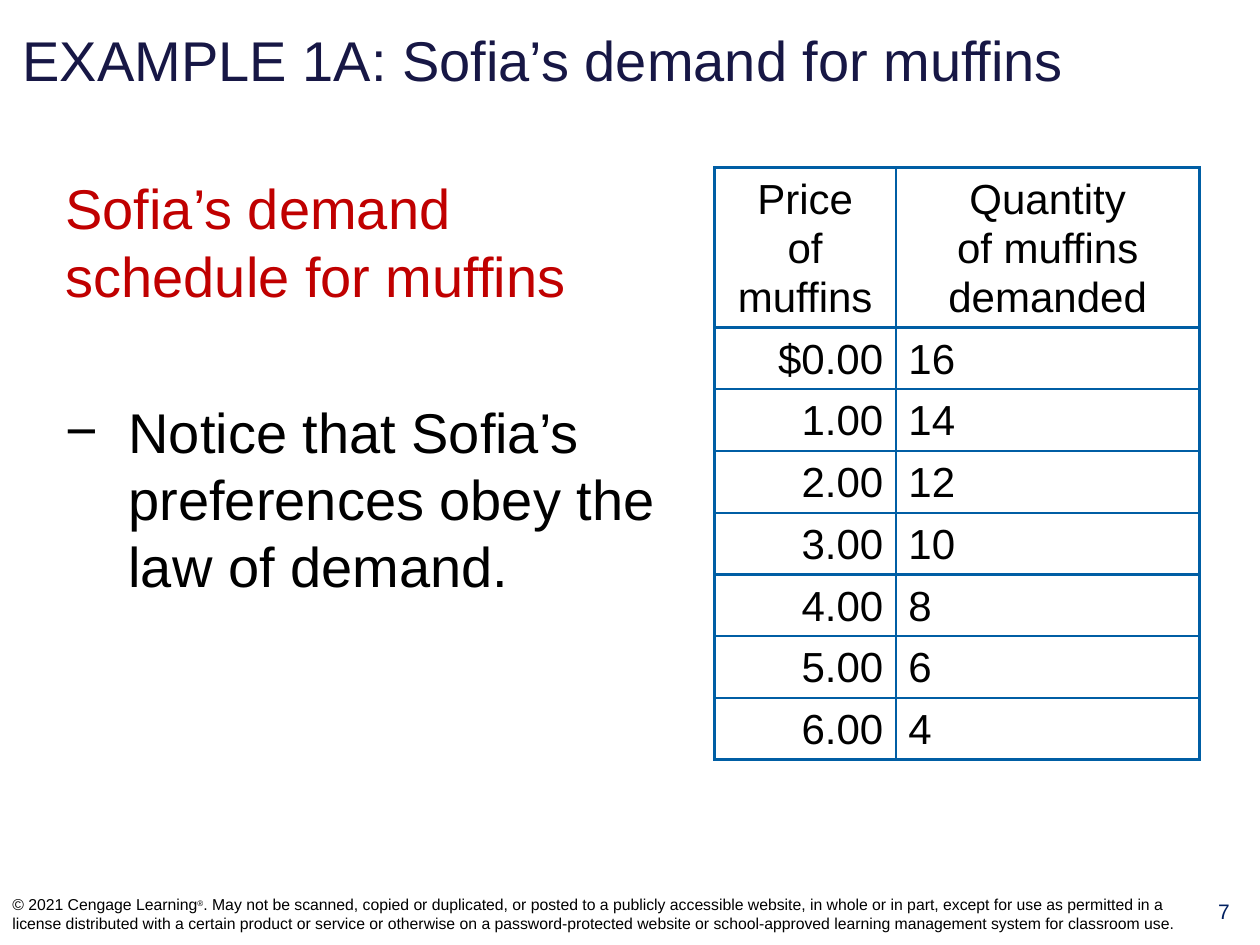
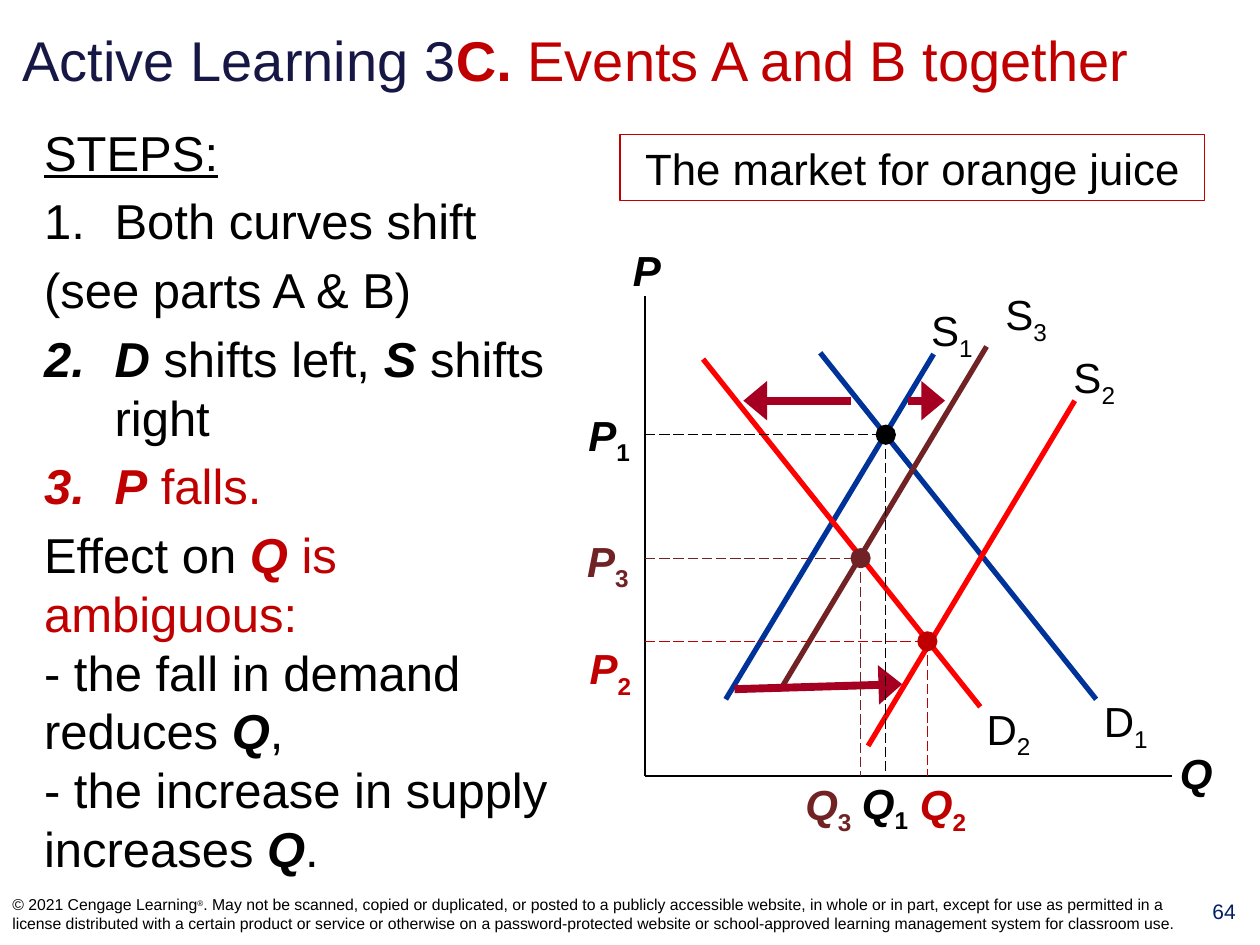
import collections

import lxml.etree
import pptx
import pptx.dml.color
import pptx.enum.dml
import pptx.enum.shapes
import pptx.enum.text
import pptx.oxml.ns
import pptx.util

Inches = pptx.util.Inches
Pt = pptx.util.Pt
ALIGN = pptx.enum.text.PP_ALIGN
ANCHOR = pptx.enum.text.MSO_ANCHOR

FONT = "Arial"
COLORS = {
    "title": "171745", "number": "002060", "text": "000000", "accent": "C00000",
    "grid": "005EA4", "paper": "FFFFFF", "before": "003399", "after": "FF0000",
    "middle": "702224", "arrow": "A50021",
}

Box = collections.namedtuple("Box", "left top width height")
Span = collections.namedtuple("Span", "text style color", defaults=("", None))

TITLE_BOX = Box(0.08, 0.11, 9.75, 0.72)
NUMBER_BOX = Box(9.43, 7.08, 0.57, 0.41)
FOOTER_BOX = Box(0, 7, 9.5, 0.5)
COPYRIGHT = [
    Span("© 2021 Cengage Learning"),
    Span("®", "^"),
    Span(". May not be scanned, copied or duplicated, or posted to a publicly accessible "
         "website, in whole or in part, except for use as permitted in a license distributed "
         "with a certain product or service or otherwise on a password-protected website or "
         "school-approved learning management system for classroom use."),
]


def rgb(name):
    return pptx.dml.color.RGBColor.from_string(COLORS[name])


def add_xml(parent, tag, **attributes):
    return lxml.etree.SubElement(parent, pptx.oxml.ns.qn(tag), attributes)


def write(para, spans, size, color="text", align=ALIGN.LEFT):
    """Fill a paragraph; span styles are b, i, u, ^ (superscript) and _ (subscript)."""
    para.alignment = align
    para.font.name = FONT
    para.font.size = Pt(size)
    para.font.color.rgb = rgb(color)
    for span in spans:
        for index, line in enumerate(span.text.split("\n")):
            if index:
                para.add_line_break()
            if not line:
                continue
            run = para.add_run()
            run.text = line
            for mark, attribute in (("b", "bold"), ("i", "italic"), ("u", "underline")):
                if mark in span.style:
                    setattr(run.font, attribute, True)
            if span.color:
                run.font.color.rgb = rgb(span.color)
            if "^" in span.style:
                run.font.size = Pt(size - 1)
                run.font._element.set("baseline", "30000")
            if "_" in span.style:
                run.font._element.set("baseline", "-25000")


def place(shape, box):
    shape.left, shape.top, shape.width, shape.height = map(Inches, box)


def add_text(page, box, spans, size, color="text", align=ALIGN.LEFT, anchor=ANCHOR.TOP,
             inset=True):
    frame = page.shapes.add_textbox(*map(Inches, box)).text_frame
    frame.word_wrap = True
    frame.vertical_anchor = anchor
    if not inset:
        frame.margin_left = frame.margin_right = 0
        frame.margin_top = frame.margin_bottom = 0
    write(frame.paragraphs[0], spans, size, color, align)


def add_page(deck, title_spans, number):
    """Add a slide with the shared title, page number and copyright line."""
    page = deck.slides.add_slide(deck.slide_layouts[1])
    title = page.shapes.title
    place(title, TITLE_BOX)
    title.text_frame.auto_size = pptx.enum.text.MSO_AUTO_SIZE.NONE
    title.text_frame.vertical_anchor = ANCHOR.MIDDLE
    write(title.text_frame.paragraphs[0], title_spans, 32, "title")
    add_text(page, NUMBER_BOX, [Span(number)], 12, "number", ALIGN.CENTER)
    add_text(page, FOOTER_BOX, COPYRIGHT, 9, anchor=ANCHOR.MIDDLE)
    return page


def set_bullet(para, bullet, indent):
    """A text bullet is used as it is, a number starts automatic numbering there."""
    properties = para._p.get_or_add_pPr()
    hanging = Inches(indent) if bullet else 0
    properties.set("marL", str(hanging))
    properties.set("indent", str(-hanging))
    if bullet is None:
        add_xml(properties, "a:buNone")
    elif isinstance(bullet, int):
        add_xml(properties, "a:buAutoNum", type="arabicPeriod", startAt=str(bullet))
    else:
        add_xml(properties, "a:buChar", char=bullet)


def fill_body(page, box, items, size, indent, gap):
    """Fill the body placeholder from (bullet, spans) items."""
    body = page.placeholders[1]
    place(body, box)
    frame = body.text_frame
    frame.auto_size = pptx.enum.text.MSO_AUTO_SIZE.NONE
    for index, (bullet, spans) in enumerate(items):
        para = frame.add_paragraph() if index else frame.paragraphs[0]
        set_bullet(para, bullet, indent)
        para.space_before = Pt(gap if index else 0)
        write(para, spans, size)


def format_cell(cell, text, align):
    properties = cell._tc.get_or_add_tcPr()
    for side in ("a:lnL", "a:lnR", "a:lnT", "a:lnB"):
        border = add_xml(properties, side, w=str(Pt(1.5)))
        add_xml(add_xml(border, "a:solidFill"), "a:srgbClr", val=COLORS["grid"])
    cell.fill.background()
    cell.vertical_anchor = ANCHOR.MIDDLE
    cell.margin_top = cell.margin_bottom = 0
    para = cell.text_frame.paragraphs[0]
    para.line_spacing = 1.05
    write(para, [Span(text)], 24, align=align)


def add_schedule(page, box, header, rows, column_widths, row_height):
    table = page.shapes.add_table(len(rows) + 1, len(header), *map(Inches, box)).table
    table.first_row = table.horz_banding = False
    for column, width in zip(table.columns, column_widths):
        column.width = Inches(width)
    for row in table.rows:
        row.height = Inches(row_height)
    table.rows[0].height = Inches(box.height - row_height * len(rows))
    for row_index, values in enumerate([header, *rows]):
        aligns = (ALIGN.RIGHT, ALIGN.LEFT) if row_index else (ALIGN.CENTER, ALIGN.CENTER)
        for column_index, (text, align) in enumerate(zip(values, aligns)):
            format_cell(table.cell(row_index, column_index), text, align)


def add_caption(page, box, text):
    caption = page.shapes.add_shape(pptx.enum.shapes.MSO_SHAPE.RECTANGLE, *map(Inches, box))
    caption.shadow.inherit = False
    caption.fill.solid()
    caption.fill.fore_color.rgb = rgb("paper")
    caption.line.color.rgb = rgb("accent")
    caption.line.width = Pt(0.75)
    write(caption.text_frame.paragraphs[0], [Span(text)], 25, align=ALIGN.CENTER)


def add_line(page, box, start, end, color, width, dashed=False, arrow=False):
    """Draw a line between two points measured from the corner of the box."""
    points = [Inches(value) for x, y in (start, end) for value in (box.left + x, box.top + y)]
    line = page.shapes.add_connector(pptx.enum.shapes.MSO_CONNECTOR.STRAIGHT, *points)
    line.line.color.rgb = rgb(color)
    line.line.width = Pt(width)
    if dashed:
        line.line.dash_style = pptx.enum.dml.MSO_LINE.LONG_DASH
    if arrow:
        add_xml(line.line._get_or_add_ln(), "a:tailEnd", type="triangle", w="lg", len="med")
    add_xml(line._element.spPr, "a:effectLst")


def add_label(page, box, position, letter, index="", style="", color="text"):
    x, y = position
    spans = [Span(letter, style)]
    if index:
        spans.append(Span(index, style.replace("i", "") + "_"))
    add_text(page, Box(box.left + x, box.top + y, 0.53, 0.4), spans, 24, color,
             ALIGN.CENTER, inset=False)


def add_equilibrium(page, box, index, point, price_label, quantity_label, color):
    x, y = point
    add_line(page, box, (0, y), point, color, 0.75, dashed=True)
    add_line(page, box, point, (x, box.height), color, 0.75, dashed=True)
    size = 0.15
    dot = page.shapes.add_shape(
        pptx.enum.shapes.MSO_SHAPE.OVAL, Inches(box.left + x - size / 2),
        Inches(box.top + y - size / 2), Inches(size), Inches(size))
    dot.shadow.inherit = False
    dot.fill.solid()
    dot.fill.fore_color.rgb = rgb(color)
    dot.line.color.rgb = rgb(color)
    dot.line.width = Pt(0.75)
    add_label(page, box, price_label, "P", index, "bi", color)
    add_label(page, box, quantity_label, "Q", index, "bi", color)


def add_market_graph(page, box):
    origin = (0, box.height)
    add_line(page, box, (0, 0), origin, "text", 1)
    add_line(page, box, origin, (box.width, box.height), "text", 1)
    add_label(page, box, (-0.25, -0.41), "P", style="bi")
    add_label(page, box, (box.width - 0.07, box.height - 0.23), "Q", style="bi")

    curves = [
        ("D1", (1.39, 0.45), (3.58, 3.2), (3.55, 3.17), "before"),
        ("S1", (0.64, 3.2), (2.29, 0.46), (2.17, 0.07), "before"),
        ("D2", (0.46, 0.5), (2.66, 3.26), (2.62, 3.23), "after"),
        ("S2", (1.77, 3.57), (3.41, 0.83), (3.3, 0.44), "after"),
        ("S3", (1.07, 3.13), (2.71, 0.4), (2.76, -0.06), "middle"),
    ]
    for (letter, index), start, end, label, color in curves:
        add_line(page, box, start, end, color, 3)
        add_label(page, box, label, letter, index)

    shifts = [((1.63, 0.83), (0.78, 0.83)), ((0.71, 3.12), (2.04, 3.08)),
              ((2.09, 0.83), (2.38, 0.83))]
    for start, end in shifts:
        add_line(page, box, start, end, "arrow", 4.5, arrow=True)

    equilibria = [
        ("1", (1.91, 1.1), (-0.55, 0.9), (1.64, 3.82), "text"),
        ("3", (1.71, 2.08), (-0.56, 1.9), (1.19, 3.83), "middle"),
        ("2", (2.24, 2.74), (-0.54, 2.75), (2.1, 3.83), "accent"),
    ]
    for equilibrium in equilibria:
        add_equilibrium(page, box, *equilibrium)


def build_demand_schedule(deck):
    page = add_page(deck, [Span("EXAMPLE 1A: Sofia’s demand for muffins")], "7")
    items = [
        (None, [Span("Sofia’s demand schedule for muffins", color="accent")]),
        ("−", [Span("Notice that Sofia’s preferences obey the law of demand.")]),
    ]
    fill_body(page, Box(0.42, 1.33, 5.08, 5.42), items, 32, 0.5, gap=51)
    rows = [(f"{'' if price else '$'}{price}.00", str(16 - 2 * price)) for price in range(7)]
    add_schedule(page, Box(5.67, 1.33, 3.85, 4.7),
                 ("Price\nof muffins", "Quantity\nof muffins demanded"),
                 rows, (1.44, 2.41), 0.49)


def build_events_together(deck):
    title = [Span("Active Learning 3"), Span("C. ", "b", "accent"),
             Span("Events A and B together", color="accent")]
    page = add_page(deck, title, "64")
    items = [
        (None, [Span("STEPS:", "u")]),
        (1, [Span("Both curves shift")]),
        (None, [Span("(see parts A & B)")]),
        (2, [Span("D", "bi"), Span(" shifts left, "), Span("S", "bi"), Span(" shifts right")]),
        (3, [Span("P", "bi", "accent"), Span(" falls.", color="accent")]),
        (None, [Span("Effect on "), Span("Q", "bi", "accent"),
                Span(" is ambiguous:\n", color="accent"),
                Span("- the fall in demand reduces "), Span("Q", "bi"),
                Span(",\n- the increase in supply increases "), Span("Q", "bi"), Span(".")]),
    ]
    fill_body(page, Box(0.25, 0.92, 4.33, 6.42), items, 28, 0.56, gap=5.6)
    add_caption(page, Box(4.92, 1.07, 4.64, 0.52), "The market for orange juice")
    add_market_graph(page, Box(5.12, 2.35, 4.18, 3.81))


def main():
    deck = pptx.Presentation()
    deck.slide_width, deck.slide_height = Inches(10), Inches(7.5)
    build_demand_schedule(deck)
    build_events_together(deck)
    deck.save("out.pptx")


if __name__ == "__main__":
    main()
